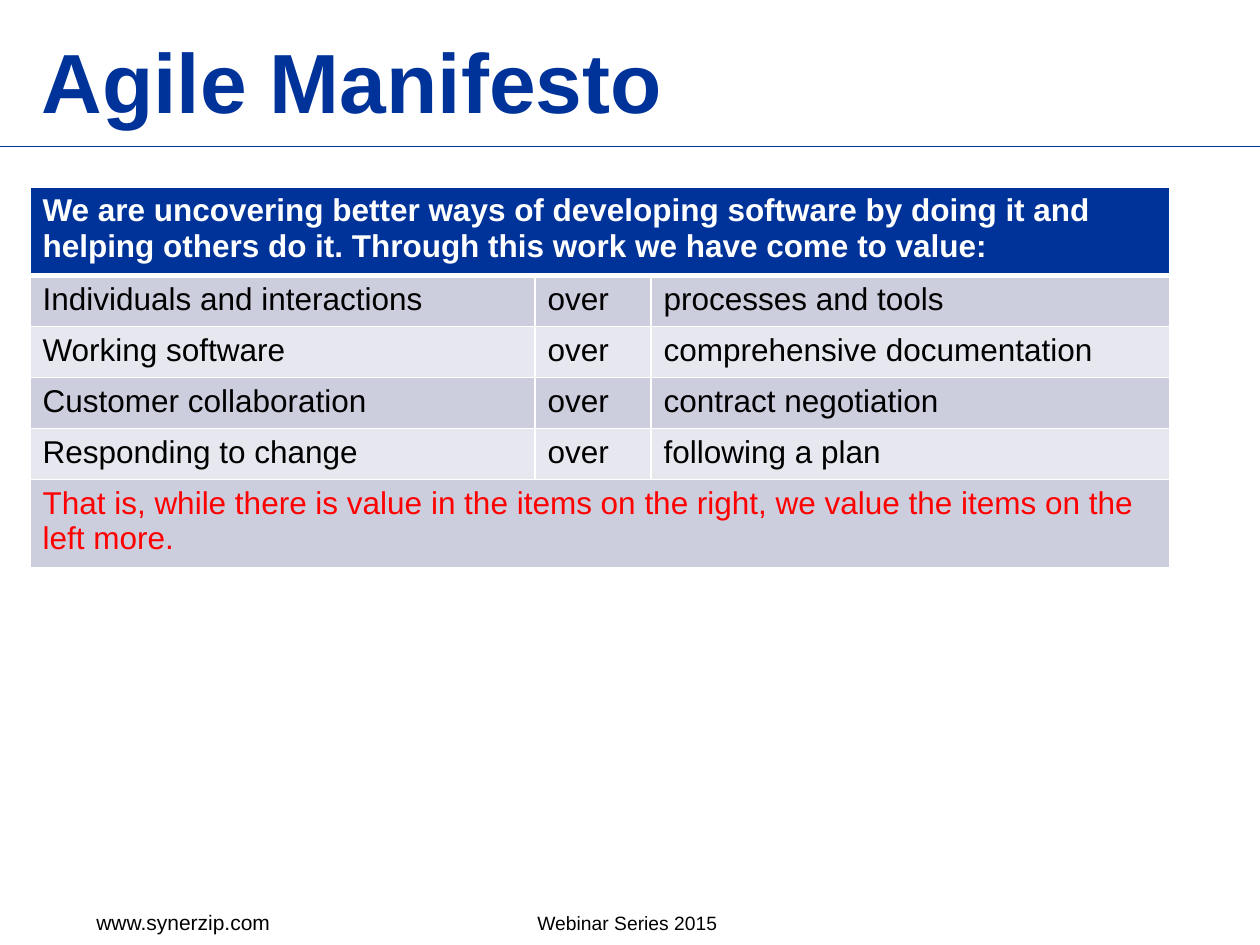
"""Build the Agile Manifesto slide."""
from lxml import etree
from pptx import Presentation
from pptx import util as u
from pptx.dml.color import RGBColor
from pptx.enum import shapes, text
from pptx.oxml.ns import qn

NAVY = RGBColor(0x00, 0x33, 0x99)
BLACK = RGBColor(0x00, 0x00, 0x00)
WHITE = RGBColor(0xFF, 0xFF, 0xFF)
RED = RGBColor(0xFF, 0x00, 0x00)
DARK_BAND = RGBColor(0xCC, 0xCE, 0xDE)
LIGHT_BAND = RGBColor(0xE7, 0xE8, 0xEF)

HEADING = ("We are uncovering better ways of developing software by doing it and "
           "helping others do it. Through this work we have come to value:")
VALUES = [
    ("Individuals and interactions", "processes and tools"),
    ("Working software", "comprehensive documentation"),
    ("Customer collaboration", "contract negotiation"),
    ("Responding to change", "following a plan"),
]
CLOSING = ("That is, while there is value in the items on the right, "
           "we value the items on the left more.")


def px(count):
    return u.Emu(round(count * 914400 / 126))


class SlideBuilder:
    """Hold the text style and the current page."""

    font_name = "Arial"

    def __init__(self, page):
        self.page = page

    def set_text(self, frame, words, size, color, bold=False):
        paragraph = frame.paragraphs[0]
        paragraph.text = words
        paragraph.alignment = text.PP_ALIGN.LEFT
        font = paragraph.font
        font.name, font.size, font.bold = self.font_name, u.Pt(size), bold
        font.color.rgb = color

    def title(self, words, left, top, width, height):
        shape = self.page.shapes.title
        shape.left, shape.top, shape.width, shape.height = map(px, (left, top, width, height))
        shape.text_frame.vertical_anchor = text.MSO_ANCHOR.BOTTOM
        shape.text_frame.auto_size = text.MSO_AUTO_SIZE.NONE
        self.set_text(shape.text_frame, words, 48, NAVY, bold=True)

    def label(self, words, left, top, width, height, size):
        box = self.page.shapes.add_textbox(*map(px, (left, top, width, height)))
        box.text_frame.word_wrap = False
        box.text_frame.auto_size = text.MSO_AUTO_SIZE.SHAPE_TO_FIT_TEXT
        self.set_text(box.text_frame, words, size, BLACK)

    def rule(self, left, top, right):
        line = self.page.shapes.add_connector(
            shapes.MSO_CONNECTOR.STRAIGHT, px(left), px(top), px(right), px(top))
        line.line.color.rgb = NAVY
        line.line.width = u.Pt(0.5)
        etree.SubElement(line._element.spPr, qn("a:effectLst"))

    def borders(self, cell, **widths):
        properties = cell._tc.get_or_add_tcPr()
        for position, side in enumerate("LRTB"):
            edge = etree.Element(qn(f"a:ln{side}"), w=str(int(u.Pt(widths.get(side, 1)))))
            fill = etree.SubElement(edge, qn("a:solidFill"))
            etree.SubElement(fill, qn("a:srgbClr"), val=str(WHITE))
            properties.insert(position, edge)

    def table(self, rows, left, top, columns, row_height):
        frame = self.page.shapes.add_table(
            len(rows), len(columns), px(left), px(top),
            px(sum(columns)), px(row_height * len(rows)))
        table = frame.table
        table.first_row = table.horz_banding = False
        for column, width in zip(table.columns, columns):
            column.width = px(width)
        for index, (words, fill, color) in enumerate(rows):
            table.rows[index].height = px(row_height)
            for cell in table.rows[index].cells:
                cell.fill.solid()
                cell.fill.fore_color.rgb = fill
                self.borders(cell, T=3 if index == 1 else 1, B=3 if index == 0 else 1)
            if len(words) == 1:
                table.cell(index, 0).merge(table.cell(index, len(columns) - 1))
            for position, entry in enumerate(words):
                self.set_text(table.cell(index, position).text_frame, entry, 18, color,
                              bold=index == 0)


def main():
    deck = Presentation()
    deck.slide_width, deck.slide_height = px(1260), px(945)
    builder = SlideBuilder(deck.slides.add_slide(deck.slide_layouts[5]))

    builder.rule(0, 146, 1260)
    builder.label("www.synerzip.com", 84, 903, 202, 38, size=12)
    builder.label("Webinar Series 2015", 525, 905, 208, 36, size=11)
    builder.title("Agile Manifesto", 29, 19, 1043, 118)

    bands = (DARK_BAND, LIGHT_BAND)
    rows = [((HEADING,), NAVY, WHITE)]
    rows += [((left, "over", right), bands[index % 2], BLACK)
             for index, (left, right) in enumerate(VALUES)]
    rows.append(((CLOSING,), DARK_BAND, RED))
    builder.table(rows, left=30, top=187, columns=(505, 116, 519), row_height=51)

    deck.save("out.pptx")


if __name__ == "__main__":
    main()
